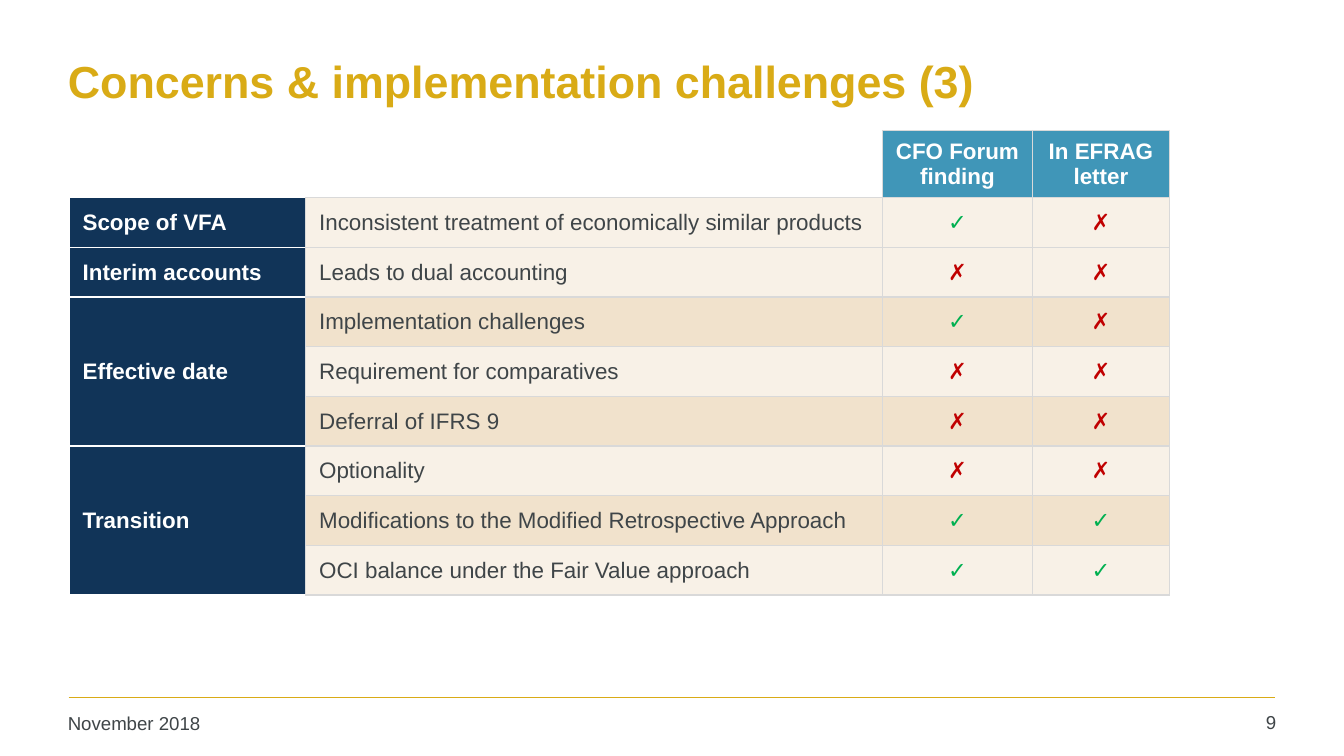
"""Build a slide with a table of concerns and implementation challenges."""
from lxml.etree import SubElement
from pptx import Presentation
from pptx.dml.color import RGBColor
from pptx.enum.shapes import MSO_CONNECTOR
from pptx.enum.text import MSO_ANCHOR, PP_ALIGN
from pptx.oxml.ns import qn
from pptx.util import Pt

PX = 4572
GOLD, GREY, WHITE, NAVY, TEAL = "D9AB16", "3F4548", "FFFFFF", "113458", "4096B8"
LIGHT, DARK, RULE = "F8F1E7", "F1E2CC", "D9D9D9"
MARKS = {"✓": "00B050", "✗": "C00000"}


def write(frame, text, size, color, bold=False, align=PP_ALIGN.LEFT):
    para = frame.paragraphs[0]
    para.alignment = align
    run = para.add_run()
    run.text = text
    style = {"name": "Arial", "size": Pt(size), "bold": bold}
    for key, value in style.items():
        setattr(run.font, key, value)
    run.font.color.rgb = RGBColor.from_string(color)


def edge(cell, colors):
    props = cell._tc.get_or_add_tcPr()
    for side, color in zip("LRTB", colors):
        width = 12700 if color == WHITE else 9525
        line = SubElement(props, qn(f"a:ln{side}"), w=str(width))
        fill = SubElement(line, qn("a:solidFill"))
        SubElement(fill, qn("a:srgbClr"), val=color)


deck = Presentation()
deck.slide_width, deck.slide_height = 2000 * PX, 1125 * PX
slide = deck.slides.add_slide(deck.slide_layouts[6])

rule = slide.shapes.add_connector(
    MSO_CONNECTOR.STRAIGHT, 102 * PX, 1038 * PX, 1898 * PX, 1038 * PX)
rule.line.color.rgb = RGBColor.from_string(GOLD)
rule.line.width = Pt(1)
SubElement(rule._element.spPr, qn("a:effectLst"))

texts = [
    ((86, 66, 1814, 188), 14, "Concerns & implementation challenges (3)", 24, GOLD, True, PP_ALIGN.LEFT),
    ((86, 1052, 440, 54), 8, "November 2018", 10, GREY, False, PP_ALIGN.LEFT),
    ((1772, 1050, 142, 56), 8, "9", 10, GREY, False, PP_ALIGN.RIGHT),
]
for place, top, *words in texts:
    frame = slide.shapes.add_textbox(*(n * PX for n in place)).text_frame
    form = {"word_wrap": True, "margin_left": 15 * PX, "margin_right": 15 * PX,
            "margin_top": top * PX, "margin_bottom": 8 * PX}
    for key, value in form.items():
        setattr(frame, key, value)
    write(frame, *words)

rows = [
    ("", "", "CFO Forum finding", "In EFRAG letter", None),
    ("Scope of VFA", "Inconsistent treatment of economically similar products", "✓", "✗", LIGHT),
    ("Interim accounts", "Leads to dual accounting", "✗", "✗", LIGHT),
    ("Effective date", "Implementation challenges", "✓", "✗", DARK),
    ("", "Requirement for comparatives", "✗", "✗", LIGHT),
    ("", "Deferral of IFRS 9", "✗", "✗", DARK),
    ("Transition", "Optionality", "✗", "✗", LIGHT),
    ("", "Modifications to the Modified Retrospective Approach", "✓", "✓", DARK),
    ("", "OCI balance under the Fair Value approach", "✓", "✓", LIGHT),
]
widths = [352, 858, 224, 203]
heights = [99] + [74] * 8
table = slide.shapes.add_table(
    len(rows), 4, 103 * PX, 194 * PX, sum(widths) * PX, sum(heights) * PX).table
table.first_row = table.horz_banding = False
for col, width in zip(table.columns, widths):
    col.width = width * PX
for row, height in zip(table.rows, heights):
    row.height = height * PX

for r, (*words, band) in enumerate(rows):
    for c, text in enumerate(words):
        cell = table.cell(r, c)
        cell.vertical_anchor = MSO_ANCHOR.MIDDLE
        if c == 0:
            edge(cell, [WHITE, RULE if r else WHITE, WHITE, WHITE])
        elif c == 1 and r == 0:
            edge(cell, [WHITE, RULE, WHITE, RULE])
        else:
            edge(cell, [RULE] * 4)
        if r == 0 and c < 2:
            cell.fill.background()
            continue
        tint = TEAL if r == 0 else NAVY if c == 0 else band
        cell.fill.solid()
        cell.fill.fore_color.rgb = RGBColor.from_string(tint)
        if text:
            ink = GREY if c == 1 else MARKS.get(text, WHITE)
            align = PP_ALIGN.CENTER if c > 1 else PP_ALIGN.LEFT
            write(cell.text_frame, text, 12, ink, c != 1, align)

for top in (3, 6):
    table.cell(top, 0).merge(table.cell(top + 2, 0))

deck.save("out.pptx")
